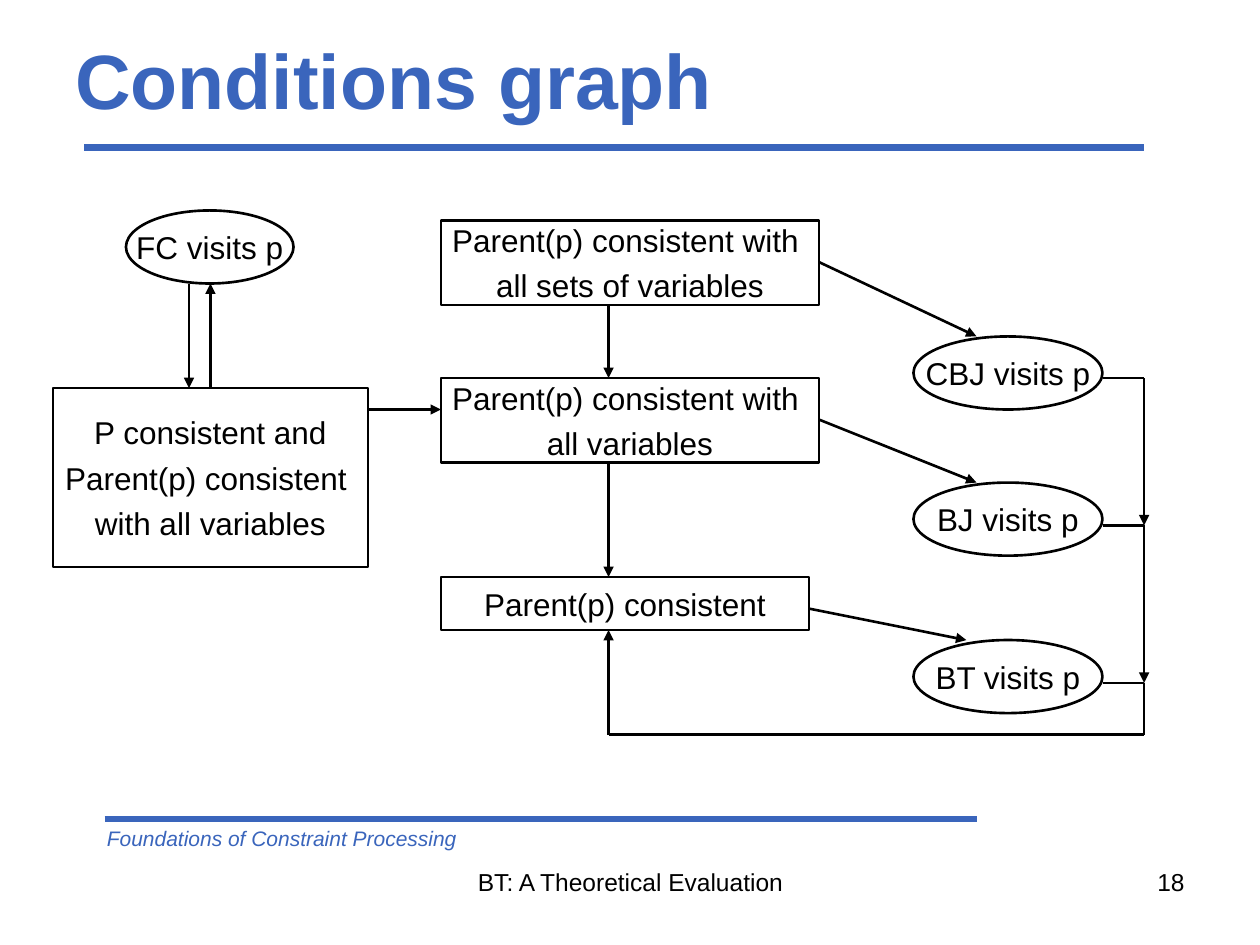
from pptx import Presentation
from pptx import util as u
from pptx.dml.color import RGBColor
from pptx.enum import shapes, text
from pptx.oxml.ns import qn
from lxml import etree

BLUE = RGBColor(0x3A, 0x65, 0xBC)
BLACK = RGBColor(0, 0, 0)
WHITE = RGBColor(255, 255, 255)
ALIGN = text.PP_ALIGN
ANCHOR = text.MSO_ANCHOR
RECT = shapes.MSO_SHAPE.RECTANGLE
OVAL = shapes.MSO_SHAPE.OVAL

FLOW_X = 4.83
RETURN_X = 9.08
RETURN_Y = 5.83
OVAL_RIGHT = 8.75

NODES = [
    (OVAL, (1, 1.67, 1.33, 0.58), ["FC visits p"]),
    (RECT, (0.42, 3.08, 2.5, 1.42),
     ["P consistent and", "Parent(p) consistent ", "with all variables"]),
    (RECT, (3.5, 1.75, 3, 0.67), ["Parent(p) consistent with ", "all sets of variables"]),
    (RECT, (3.5, 3, 3, 0.67), ["Parent(p) consistent with ", "all variables"]),
    (RECT, (3.5, 4.58, 2.92, 0.42), ["Parent(p) consistent"]),
    (OVAL, (7.25, 2.67, 1.5, 0.58), ["CBJ visits p"]),
    (OVAL, (7.25, 3.83, 1.5, 0.58), ["BJ visits p"]),
    (OVAL, (7.25, 5.08, 1.5, 0.58), ["BT visits p"]),
]

ARROWS = [
    (1.5, 2.25, 1.5, 3.08),
    (1.67, 3.08, 1.67, 2.25),
    (2.92, 3.25, 3.5, 3.25),
    (FLOW_X, 2.42, FLOW_X, 3),
    (FLOW_X, 3.67, FLOW_X, 4.58),
    (6.5, 2.08, 7.75, 2.67),
    (6.5, 3.33, 7.75, 3.83),
    (6.42, 4.83, 7.67, 5.08),
    (RETURN_X, 3, RETURN_X, 4.17),
    (RETURN_X, 4.17, RETURN_X, 5.42),
    (FLOW_X, RETURN_Y, FLOW_X, 5),
]

PLAIN_LINES = [(OVAL_RIGHT, y, RETURN_X, y) for y in (3, 4.17, 5.42)] + [
    (RETURN_X, 5.42, RETURN_X, RETURN_Y),
    (FLOW_X, RETURN_Y, RETURN_X, RETURN_Y),
]


class SlideBuilder:
    font_name = "Arial"
    line_width = 1.5

    def __init__(self, slide):
        self.slide = slide

    def fill_text(self, box, lines, align, **font_values):
        values = {"name": self.font_name, "size": u.Pt(18), **font_values}
        color = values.pop("color", BLACK)
        frame = box.text_frame
        for index, line in enumerate(lines):
            para = frame.add_paragraph() if index else frame.paragraphs[0]
            para.alignment = align
            para.space_before = u.Pt(4.3 if index else 0)
            span = para.add_run()
            span.text = line
            for name, value in values.items():
                setattr(span.font, name, value)
            span.font.color.rgb = color

    def label(self, area, line, align=ALIGN.LEFT, anchor=ANCHOR.TOP, **font_values):
        box = self.slide.shapes.add_textbox(*map(u.Inches, area))
        box.text_frame.word_wrap = True
        box.text_frame.vertical_anchor = anchor
        self.fill_text(box, [line], align, **font_values)

    def node(self, kind, area, lines):
        box = self.slide.shapes.add_shape(kind, *map(u.Inches, area))
        box.shadow.inherit = False
        box.fill.solid()
        box.fill.fore_color.rgb = WHITE
        box.line.color.rgb = BLACK
        box.line.width = u.Pt(self.line_width)
        box.text_frame.word_wrap = False
        box.text_frame.vertical_anchor = ANCHOR.MIDDLE
        self.fill_text(box, lines, ALIGN.CENTER)

    def line(self, ends, color=BLACK, width=line_width, arrow=False):
        connector = self.slide.shapes.add_connector(
            shapes.MSO_CONNECTOR.STRAIGHT, *map(u.Inches, ends))
        connector.line.color.rgb = color
        connector.line.width = u.Pt(width)
        properties = connector._element.spPr
        if arrow:
            outline = properties.find(qn("a:ln"))
            etree.SubElement(outline, qn("a:tailEnd"), type="triangle")
        etree.SubElement(properties, qn("a:effectLst"))


def main():
    deck = Presentation()
    deck.slide_width = u.Inches(10)
    deck.slide_height = u.Inches(7.5)
    page = SlideBuilder(deck.slides.add_slide(deck.slide_layouts[6]))

    page.line((0.67, 1.17, RETURN_X, 1.17), BLUE, 4)
    page.line((0.83, 6.5, 7.75, 6.5), BLUE, 4)
    page.label((0.75, 6.5, 5.25, 0.3), "Foundations of Constraint Processing",
               size=u.Pt(12), italic=True, color=BLUE)
    page.label((3.42, 6.83, 3.17, 0.52), "BT: A Theoretical Evaluation",
               ALIGN.CENTER, size=u.Pt(14))
    page.label((7.17, 6.83, 2.33, 0.52), "18", ALIGN.RIGHT, size=u.Pt(14))
    page.label((0.5, 0.25, 9, 0.75), "Conditions graph", anchor=ANCHOR.MIDDLE,
               size=u.Pt(44), bold=True, color=BLUE)

    for kind, area, lines in NODES:
        page.node(kind, area, lines)
    for ends in ARROWS:
        page.line(ends, arrow=True)
    for ends in PLAIN_LINES:
        page.line(ends)

    deck.save("out.pptx")


if __name__ == "__main__":
    main()
